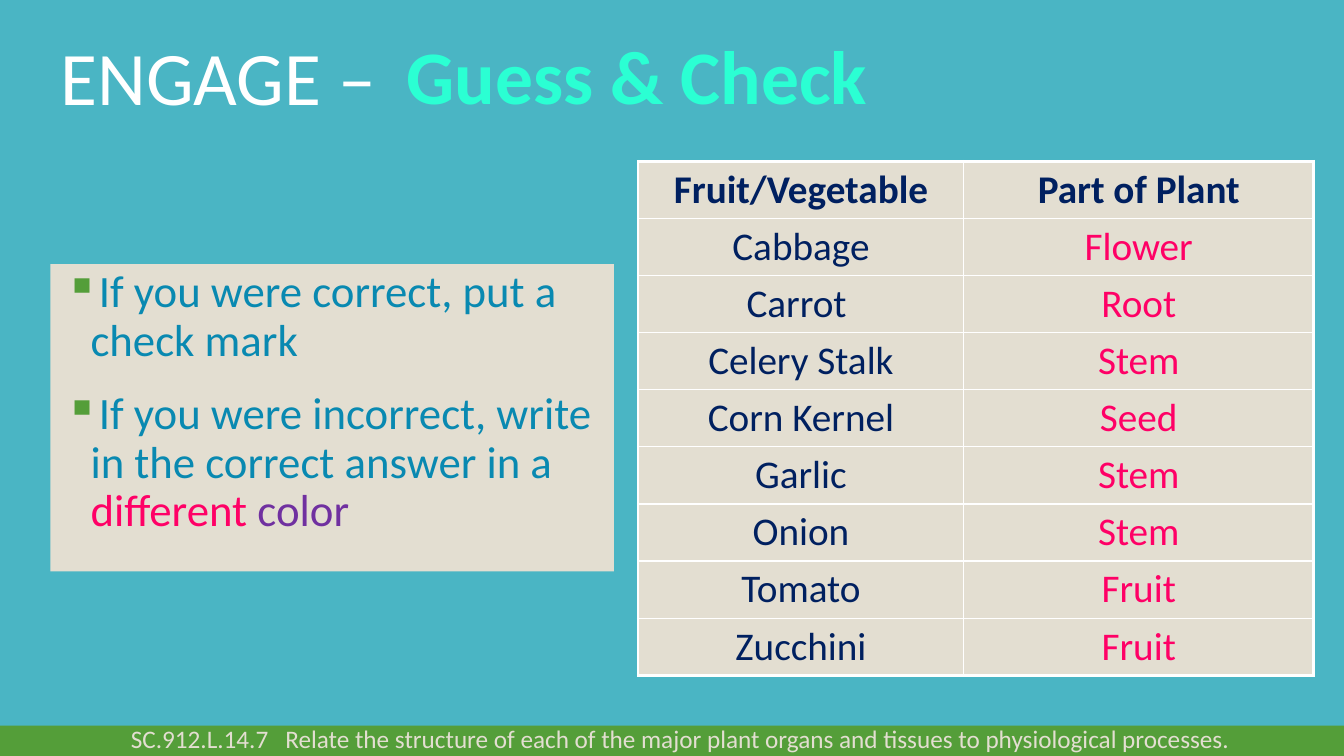
from dataclasses import dataclass

from lxml import etree
from pptx import Presentation
from pptx import util as u
from pptx.dml.color import RGBColor
from pptx.enum import shapes, text
from pptx.oxml import ns

Pt = u.Pt
ALIGN = text.PP_ALIGN
ANCHOR = text.MSO_ANCHOR


@dataclass(frozen=True)
class Theme:
    font: str = "Calibri"
    back: str = "4AB5C4"
    green: str = "549E39"
    sand: str = "E3DED1"
    white: str = "FFFFFF"
    mint: str = "2BFFD3"
    blue: str = "0989B1"
    navy: str = "002060"
    pink: str = "FF0066"
    violet: str = "7030A0"
    head: int = 54
    body: int = 32
    cell: int = 28
    foot: int = 18


def rgb(code):
    return RGBColor.from_string(code)


def paint(item, color):
    item.fill.solid()
    item.fill.fore_color.rgb = rgb(color)


def write(para, words, *, font, size, color, bold=False, align=ALIGN.LEFT):
    """Add one formatted run to a paragraph."""
    para.alignment = align
    run = para.add_run()
    run.text = words
    run.font.name = font
    run.font.size = Pt(size)
    run.font.bold = bold
    run.font.color.rgb = rgb(color)


def bullet(para, mark, color):
    props = para._p.get_or_add_pPr()
    props.set("marL", str(Pt(21.6)))
    props.set("indent", str(Pt(-18)))
    tint = etree.SubElement(props, ns.qn("a:buClr"))
    etree.SubElement(tint, ns.qn("a:srgbClr"), val=color)
    etree.SubElement(props, ns.qn("a:buChar"), char=mark)


def border(cell, color, widths):
    """Draw cell sides; widths maps L, R, T, B to points."""
    props = cell._tc.get_or_add_tcPr()
    for spot, (side, width) in enumerate(widths.items()):
        line = etree.Element(ns.qn(f"a:ln{side}"), w=str(Pt(width)))
        fill = etree.SubElement(line, ns.qn("a:solidFill"))
        etree.SubElement(fill, ns.qn("a:srgbClr"), val=color)
        props.insert(spot, line)


class Deck:
    def __init__(self, theme):
        self.theme = theme
        self.file = Presentation()
        self.file.slide_width, self.file.slide_height = Pt(960), Pt(540)
        self.slide = self.file.slides.add_slide(self.file.slide_layouts[5])
        paint(self.slide.background, theme.back)

    def title(self, words, box):
        t = self.theme
        head = self.slide.shapes.title
        head.left, head.top, head.width, head.height = map(Pt, box)
        frame = head.text_frame
        frame.auto_size = text.MSO_AUTO_SIZE.NONE
        frame.vertical_anchor = ANCHOR.BOTTOM
        para = frame.paragraphs[0]
        para.line_spacing = 0.9
        write(para, words, font=t.font, size=t.head, color=t.white)

    def band(self, box, color):
        bar = self.slide.shapes.add_shape(
            shapes.MSO_SHAPE.RECTANGLE, *map(Pt, box))
        bar.shadow.inherit = False
        paint(bar, color)
        bar.line.fill.background()

    def label(self, words, box, **form):
        area = self.slide.shapes.add_textbox(*map(Pt, box))
        area.text_frame.word_wrap = True
        write(area.text_frame.paragraphs[0], words, font=self.theme.font,
              **form)

    def points(self, items, box):
        """Fill a panel with bullets, each a list of (words, color)."""
        t = self.theme
        panel = self.slide.shapes.add_textbox(*map(Pt, box))
        paint(panel, t.sand)
        frame = panel.text_frame
        frame.word_wrap = True
        for i, runs in enumerate(items):
            para = frame.add_paragraph() if i else frame.paragraphs[0]
            para.line_spacing = 0.9
            para.space_before = Pt(18)
            bullet(para, "▪", t.green)
            for words, color in runs:
                write(para, words, font=t.font, size=t.body, color=color)

    def table(self, rows, spot, widths, height):
        t = self.theme
        grid = self.slide.shapes.add_table(
            len(rows), len(widths), *map(Pt, spot), Pt(sum(widths)),
            Pt(height * len(rows))).table
        for col, width in zip(grid.columns, widths):
            col.width = Pt(width)
        last, end = len(rows) - 1, len(widths) - 1
        for r, row in enumerate(rows):
            grid.rows[r].height = Pt(height)
            for c, words in enumerate(row):
                cell = grid.cell(r, c)
                cell.margin_top = cell.margin_bottom = Pt(3.3)
                paint(cell, t.sand)
                edges = {"L": c == 0, "R": c == end,
                         "T": r == 0, "B": r == last}
                border(cell, t.white,
                       {k: 2.25 if out else 1 for k, out in edges.items()})
                write(cell.text_frame.paragraphs[0], words, font=t.font,
                      size=t.cell, color=t.pink if r and c else t.navy,
                      bold=r == 0, align=ALIGN.CENTER)


def main():
    t = Theme()
    deck = Deck(t)
    deck.band((0, 518.4, 960, 21.6), t.green)
    deck.title("ENGAGE –", (36, 0.7, 804, 90))
    deck.label("Guess & Check", (280, 17, 350, 73), size=t.head,
               color=t.mint, bold=True, align=ALIGN.CENTER)
    deck.points([
        [("If you were correct, put a check mark", t.blue)],
        [("If you were incorrect, write in the correct answer in a ", t.blue),
         ("different ", t.pink), ("color", t.violet)],
    ], (36, 188.6, 402.5, 219.6))
    deck.label("SC.912.L.14.7   Relate the structure of each of the major "
               "plant organs and tissues to physiological processes.",
               (86.4, 513.4, 806.4, 29), size=t.foot, color=t.sand)
    deck.table([
        ("Fruit/Vegetable", "Part of Plant"),
        ("Cabbage", "Flower"),
        ("Carrot ", "Root"),
        ("Celery Stalk", "Stem"),
        ("Corn Kernel", "Seed"),
        ("Garlic", "Stem"),
        ("Onion", "Stem"),
        ("Tomato", "Fruit"),
        ("Zucchini", "Fruit"),
    ], (455.8, 115.2), (232.6, 250), 40.8)
    deck.file.save("out.pptx")


if __name__ == "__main__":
    main()
